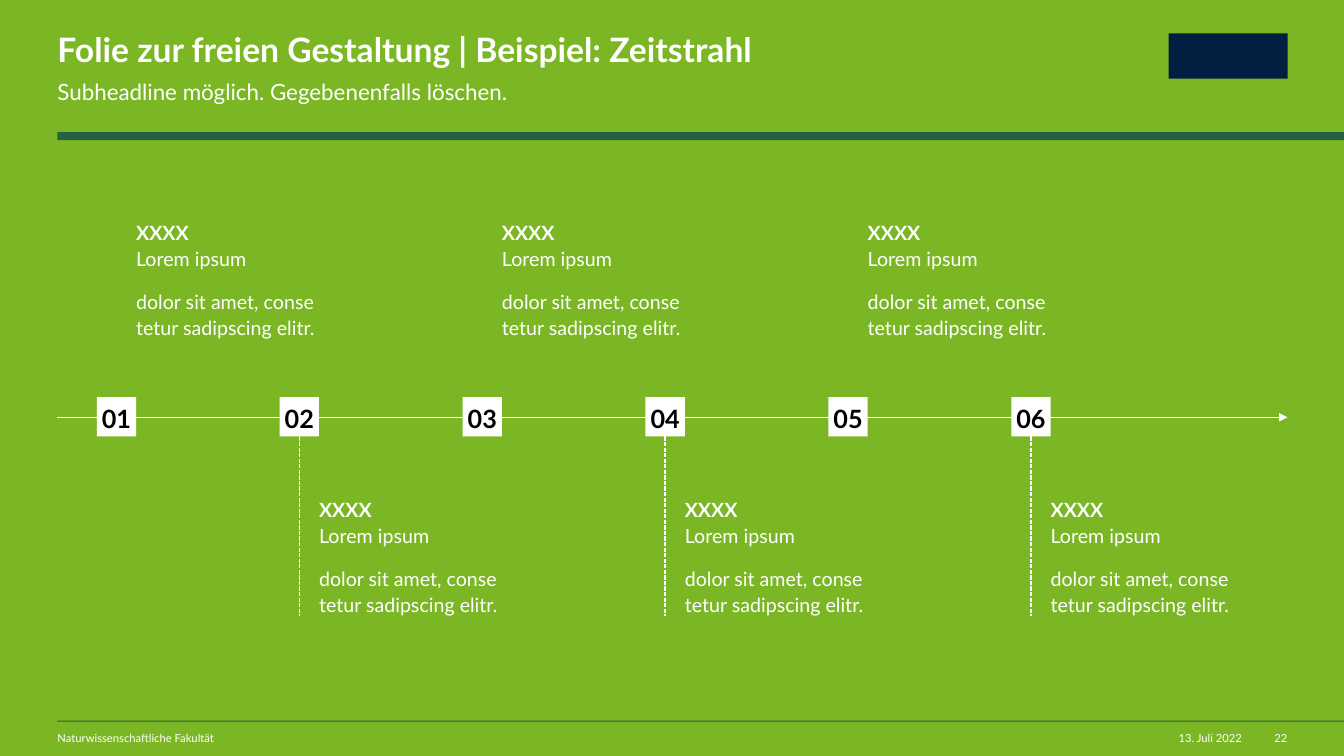
from lxml import etree
from pptx import Presentation
from pptx.dml.color import RGBColor
from pptx.enum import dml, shapes, text
from pptx.oxml.ns import qn
from pptx.util import Inches, Pt

GREEN = RGBColor(0x7B, 0xB7, 0x25)
FOREST = RGBColor(0x26, 0x61, 0x41)
NAVY = RGBColor(0x04, 0x1E, 0x42)
WHITE = RGBColor(0xFF, 0xFF, 0xFF)
BLACK = RGBColor(0, 0, 0)
FONT = "Lato"
LEFT, RIGHT, WIDE = 0.57, 12.77, 13.33
LABELS = ["01", "02", "03", "04", "05", "06"]


def place(shape, x, y, w, h):
    shape.left, shape.top = Inches(x), Inches(y)
    shape.width, shape.height = Inches(w), Inches(h)


def style(par, size, color=WHITE, bold=False, align=text.PP_ALIGN.LEFT):
    par.font.name, par.font.size = FONT, Pt(size)
    par.font.bold = bold
    par.font.color.rgb = color
    par.alignment = align


def space(par):
    """Give body text its line and paragraph spacing."""
    par.line_spacing = 1.1
    par.space_before, par.space_after = Pt(0), Pt(12)


def frame(shape, anchor=text.MSO_ANCHOR.TOP, wrap=True, right=0):
    """Return the shape's text frame with its margins cleared."""
    tf = shape.text_frame
    tf.margin_left = tf.margin_top = tf.margin_bottom = 0
    tf.margin_right = Inches(right)
    tf.word_wrap = wrap
    tf.auto_size = text.MSO_AUTO_SIZE.NONE
    tf.vertical_anchor = anchor
    return tf


def block(slide, x, y, w, h, color):
    box = slide.shapes.add_shape(
        shapes.MSO_SHAPE.RECTANGLE, Inches(x), Inches(y), Inches(w), Inches(h))
    box.shadow.inherit = False
    box.fill.solid()
    box.fill.fore_color.rgb = color
    box.line.fill.background()
    return box


def line(slide, x1, y1, x2, y2, color=WHITE):
    rule = slide.shapes.add_connector(
        shapes.MSO_CONNECTOR.STRAIGHT,
        Inches(x1), Inches(y1), Inches(x2), Inches(y2))
    rule.line.color.rgb = color
    rule.line.width = Pt(1)
    etree.SubElement(rule._element.spPr, qn("a:effectLst"))
    return rule


def header(slide, x, y, w):
    title, sub = slide.shapes.title, slide.placeholders[1]
    place(title, x, y, w, 0.36)
    par = frame(title).paragraphs[0]
    par.text = "Folie zur freien Gestaltung | Beispiel: Zeitstrahl"
    par.line_spacing = 0.9
    style(par, 24, bold=True)

    place(sub, x, y + 0.42, w, 0.27)
    par = frame(sub, right=0.39).paragraphs[0]
    par.text = "Subheadline möglich. Gegebenenfalls löschen."
    space(par)
    style(par, 16)
    props = par._p.get_or_add_pPr()
    props.set("marL", "0")
    props.set("indent", "0")
    props.insert_element_before(
        props.makeelement(qn("a:buNone")), "a:tabLst", "a:defRPr", "a:extLst")

    block(slide, x, y + 0.98, WIDE - x, 0.08, FOREST)
    block(slide, 11.59, y, 1.18, 0.45, NAVY)


def footer(slide, y):
    block(slide, LEFT, y, WIDE - LEFT, 0.01, FOREST)
    left, right = text.PP_ALIGN.LEFT, text.PP_ALIGN.RIGHT
    for words, x, w, align in [
            ("Naturwissenschaftliche Fakultät", LEFT, 5.98, left),
            ("13. Juli 2022", 11.58, 0.74, right),
            ("22", 12.63, 0.14, right)]:
        box = slide.shapes.add_textbox(
            Inches(x), Inches(y + 0.11), Inches(w), Inches(0.13))
        par = frame(box, wrap=align == left).paragraphs[0]
        par.text = words
        style(par, 8, align=align)


def note(slide, x, y):
    box = slide.shapes.add_textbox(
        Inches(x), Inches(y), Inches(1.95), Inches(1.18))
    tf = frame(box)
    head, body = tf.paragraphs[0], tf.add_paragraph()
    run = head.add_run()
    run.text = "XXXX"
    run.font.bold = True
    head.add_line_break()
    head.add_run().text = "Lorem ipsum"
    body.text = "dolor sit amet, conse\vtetur sadipscing elitr."
    for par in (head, body):
        space(par)
        style(par, 14)


def step(slide, label, x, y, size, above):
    """Draw a numbered square with its note and dashed stem."""
    box = block(slide, x, y, size, size, WHITE)
    par = frame(box, text.MSO_ANCHOR.MIDDLE).paragraphs[0]
    par.text = label
    space(par)
    style(par, 18, BLACK, True, text.PP_ALIGN.CENTER)

    note(slide, x + size, y - 1.77 if above else y + 0.98)
    mid = x + size / 2
    start, end = (y, y - 1.77) if above else (y + size, y + 2.17)
    stem = line(slide, mid, start, mid, end, GREEN if above else WHITE)
    stem.line.dash_style = dml.MSO_LINE.SQUARE_DOT
    stem.begin_connect(box, 0 if above else 2)


def timeline(slide, y):
    axis = line(slide, LEFT, y, RIGHT, y)
    etree.SubElement(
        axis._element.spPr.find(qn("a:ln")), qn("a:tailEnd"), type="triangle")
    size, first, last = 0.39, 0.96, 10.03
    pitch = (last - first) / (len(LABELS) - 1)
    for i, label in enumerate(LABELS):
        step(slide, label, first + i * pitch, y - 0.2, size, i % 2 == 0)


def main():
    deck = Presentation()
    deck.slide_width, deck.slide_height = Inches(WIDE), Inches(7.5)
    slide = deck.slides.add_slide(deck.slide_layouts[1])
    slide.background.fill.solid()
    slide.background.fill.fore_color.rgb = GREEN
    header(slide, LEFT, 0.33, 7.49)
    footer(slide, 7.15)
    timeline(slide, 4.14)
    deck.save("out.pptx")


if __name__ == "__main__":
    main()
